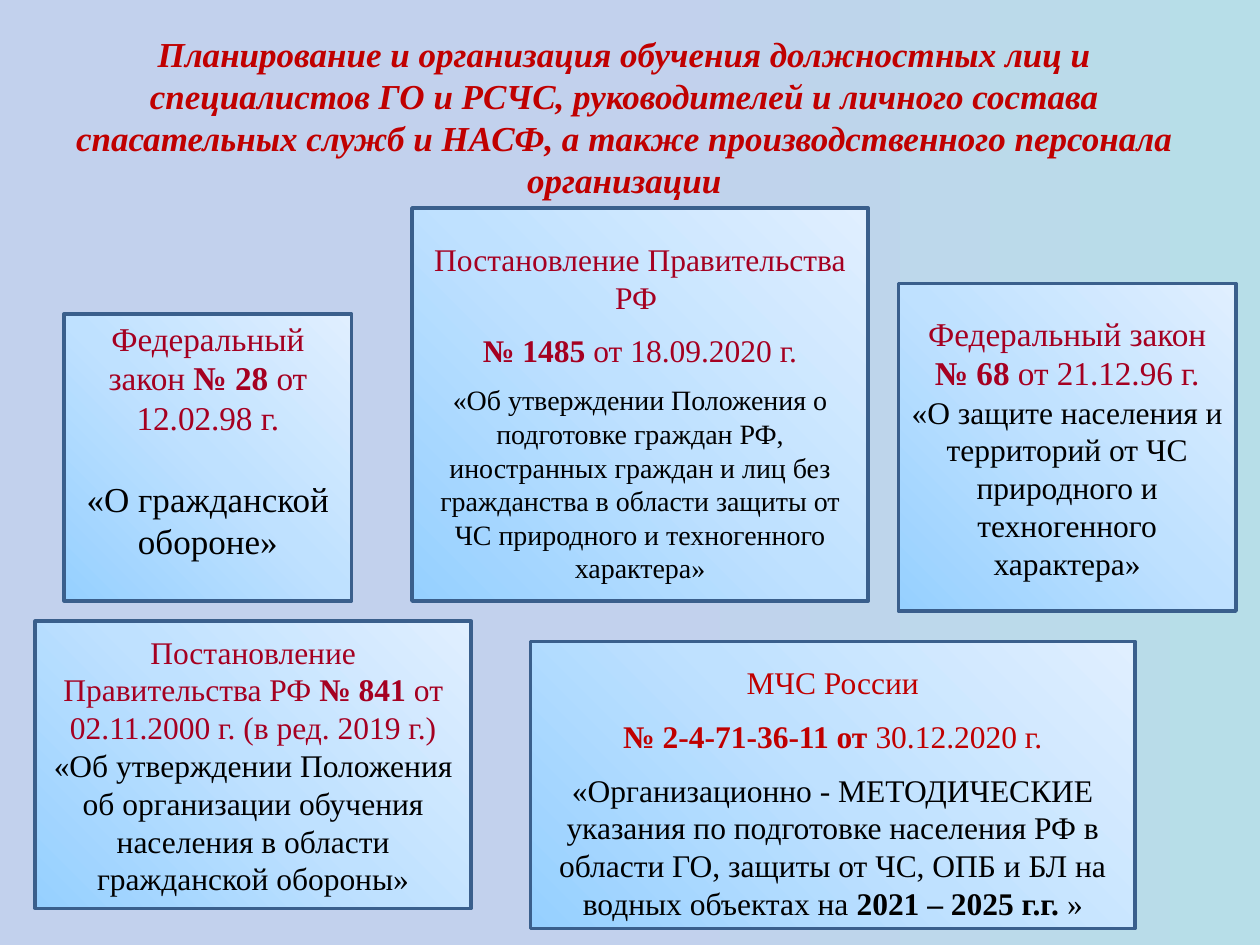
from dataclasses import dataclass

from lxml import etree
from pptx import Presentation
from pptx.dml.color import RGBColor as RGB
from pptx.enum.shapes import MSO_SHAPE as Shape
from pptx.enum.text import MSO_ANCHOR as Anchor, PP_ALIGN as Align
from pptx.oxml.ns import qn
from pptx.util import Inches, Pt


@dataclass(frozen=True)
class Theme:
    font: str = "Times New Roman"
    title: str = "C00000"
    law: str = "A50021"
    order: str = "C00000"
    body: str = "000000"
    border: str = "3A5F8C"
    box_stops: tuple = ((0, "96D0FF"), (50, "BFE1FF"), (100, "E0EFFF"))
    page_stops: tuple = ((50, "C2D1ED"), (100, "B7DEE8"), (100, "E1E8F5"))
    small: int = 16
    normal: int = 18
    medium: int = 19
    large: int = 20


T = Theme()


def set_gradient(fill, element, stops, from_corner=False):
    """Fill with the stops, left to right or outward from the bottom left corner."""
    fill.gradient()
    grad = next(element.iter(qn("a:gradFill")))
    for child in list(grad):
        grad.remove(child)
    stop_list = etree.SubElement(grad, qn("a:gsLst"))
    for position, color in stops:
        stop = etree.SubElement(stop_list, qn("a:gs"), pos=str(position * 1000))
        etree.SubElement(stop, qn("a:srgbClr"), val=color)
    if from_corner:
        path = etree.SubElement(grad, qn("a:path"), path="circle")
        etree.SubElement(path, qn("a:fillToRect"), t="100000", r="100000")
    else:
        etree.SubElement(grad, qn("a:lin"), ang="0", scaled="0")


def add_text(p, text, size=T.normal, color=T.body, bold=False, italic=False):
    r = p.add_run()
    r.text = text
    f = r.font
    f.name, f.size, f.bold, f.italic = T.font, Pt(size), bold, italic
    f.color.rgb = RGB.from_string(color)


def add_paragraph(tf, runs, before=0, **style):
    """Add a centred paragraph; every second run is bold."""
    p = tf.paragraphs[0] if not tf.paragraphs[0].runs else tf.add_paragraph()
    p.alignment = Align.CENTER
    p.space_before = Pt(before)
    for i, text in enumerate(runs):
        if text:
            add_text(p, text, **{"bold": i % 2 == 1, **style})


def add_title(s, box, text):
    tf = s.shapes.add_textbox(*map(Inches, box)).text_frame
    tf.word_wrap = True
    add_paragraph(tf, [text], size=T.large, color=T.title, bold=True, italic=True)


def add_document(s, box, paragraphs, shift=0):
    """Draw a document card; shift moves its centred text down, in inches."""
    sp = s.shapes.add_shape(Shape.RECTANGLE, *map(Inches, box))
    sp.shadow.inherit = False
    set_gradient(sp.fill, sp.element.spPr, T.box_stops, from_corner=True)
    sp.line.color.rgb = RGB.from_string(T.border)
    sp.line.width = Pt(2)
    tf = sp.text_frame
    tf.word_wrap = True
    tf.vertical_anchor = Anchor.MIDDLE
    tf.margin_top = Inches(0.05 + 2 * max(shift, 0))
    tf.margin_bottom = Inches(0.05 + 2 * max(-shift, 0))
    for runs, style in paragraphs:
        add_paragraph(tf, runs, **style)


LAW = {"size": T.medium, "color": T.law}
DECREE = {"color": T.law}
ORDER = {"color": T.order}

DOCUMENTS = [
    ((0.51, 2.49, 2.28, 2.28), [
        (["Федеральный закон ", "№ 28", " от 12.02.98 г."], LAW),
        (["«О гражданской обороне»"], {"size": T.large, "before": 23}),
    ], -0.14),
    ((3.27, 1.65, 3.62, 3.12), [
        (["Постановление Правительства РФ "], DECREE),
        (["", "№ 1485 ", "от 18.09.2020 г."], {**DECREE, "before": 9}),
        (["«Об утверждении Положения о подготовке граждан РФ, иностранных "
          "граждан и лиц без гражданства в области защиты от ЧС природного "
          "и техногенного характера»"], {"size": T.small, "before": 8}),
    ], 0.06),
    ((0.28, 4.93, 3.46, 2.28), [
        (["Постановление Правительства РФ ", "№ 841 ",
          "от 02.11.2000 г. (в ред. 2019 г.)"], DECREE),
        (["«Об утверждении Положения об организации обучения населения "
          "в области гражданской обороны»"], {}),
    ], 0),
    ((4.21, 5.09, 4.8, 2.28), [
        (["МЧС России"], ORDER),
        (["", "№ 2-4-71-36-11 от ", "30.12.2020 г."], {**ORDER, "before": 9}),
        (["«Организационно - МЕТОДИЧЕСКИЕ указания по подготовке населения РФ "
          "в области ГО, защиты от ЧС, ОПБ и БЛ на водных объектах на ",
          "2021 – 2025 г.г. ", "»"], {"before": 9}),
    ], 0.06),
    ((7.13, 2.25, 2.68, 2.6), [
        (["Федеральный закон ", "№ 68", " от 21.12.96 г."], LAW),
        (["«О защите населения и территорий от ЧС природного "
          "и техногенного характера»"], {}),
    ], 0),
]


def main():
    prs = Presentation()
    prs.slide_width, prs.slide_height = Inches(10), Inches(7.5)
    s = prs.slides.add_slide(prs.slide_layouts[6])
    set_gradient(s.background.fill, s.element, T.page_stops)
    add_title(s, (0.35, 0.21, 9.21, 1.45),
              "Планирование и организация обучения должностных лиц и специалистов "
              "ГО и РСЧС, руководителей и личного состава спасательных служб и НАСФ, "
              "а также производственного персонала организации")
    for box, paragraphs, shift in DOCUMENTS:
        add_document(s, box, paragraphs, shift)
    prs.save("out.pptx")


if __name__ == "__main__":
    main()
